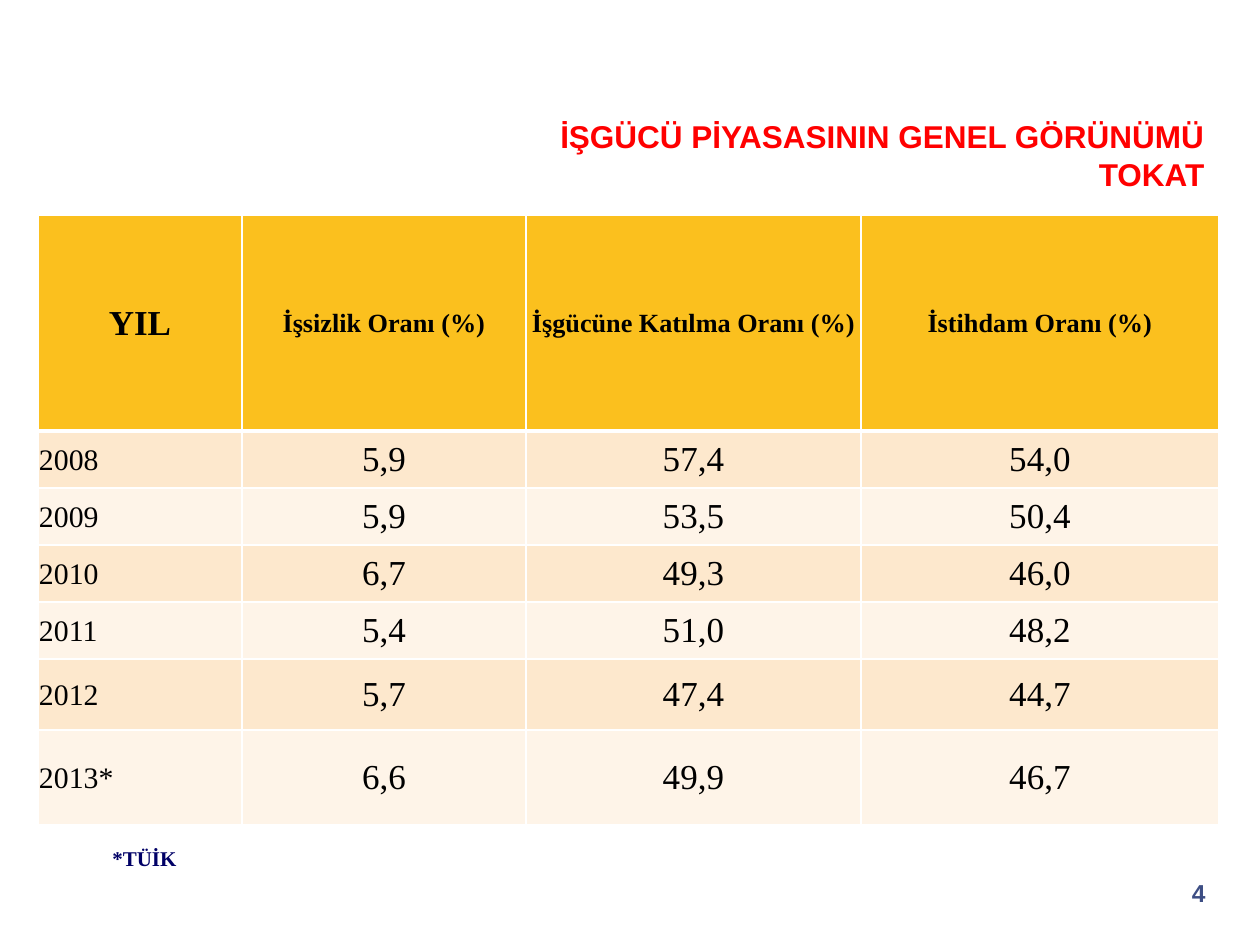
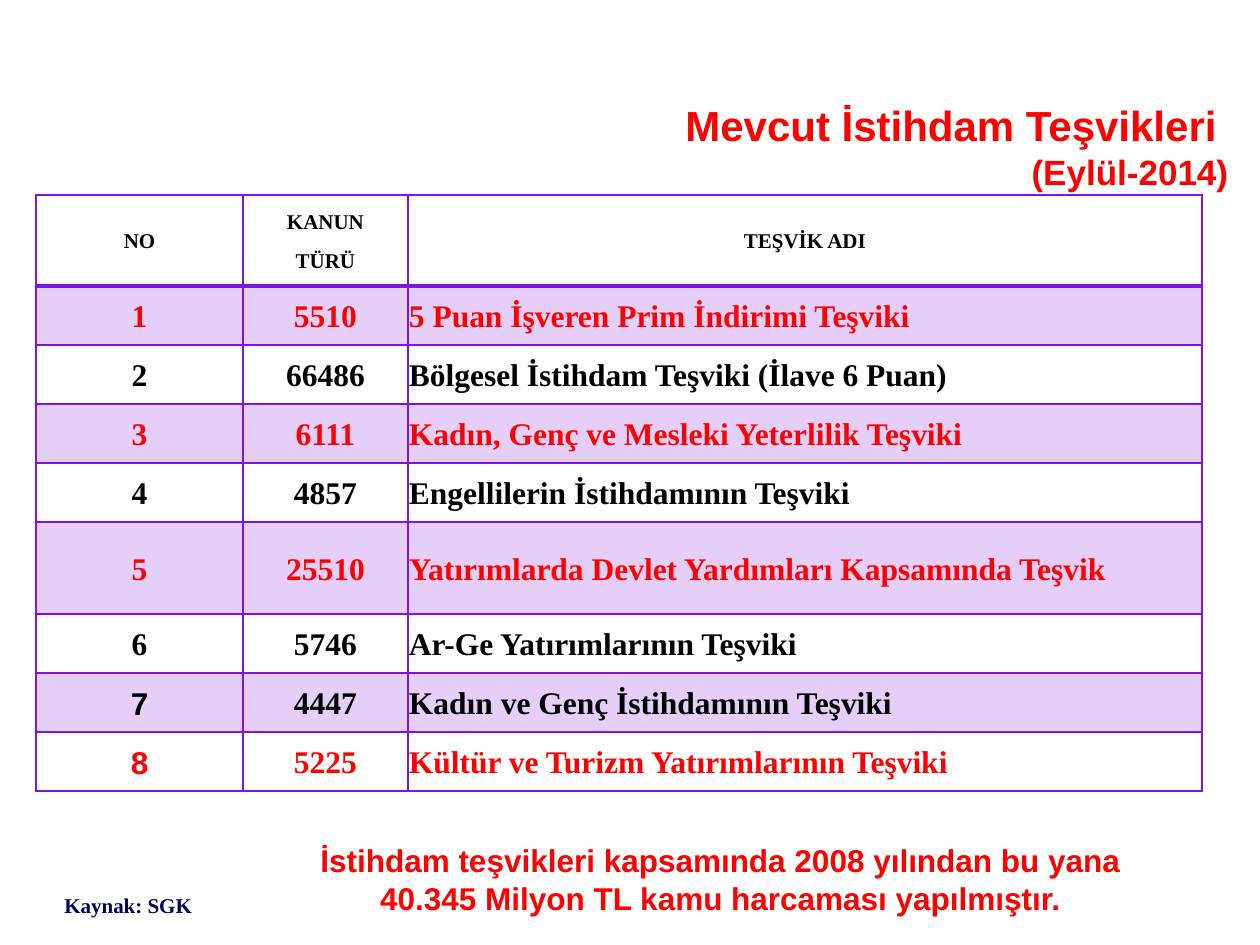
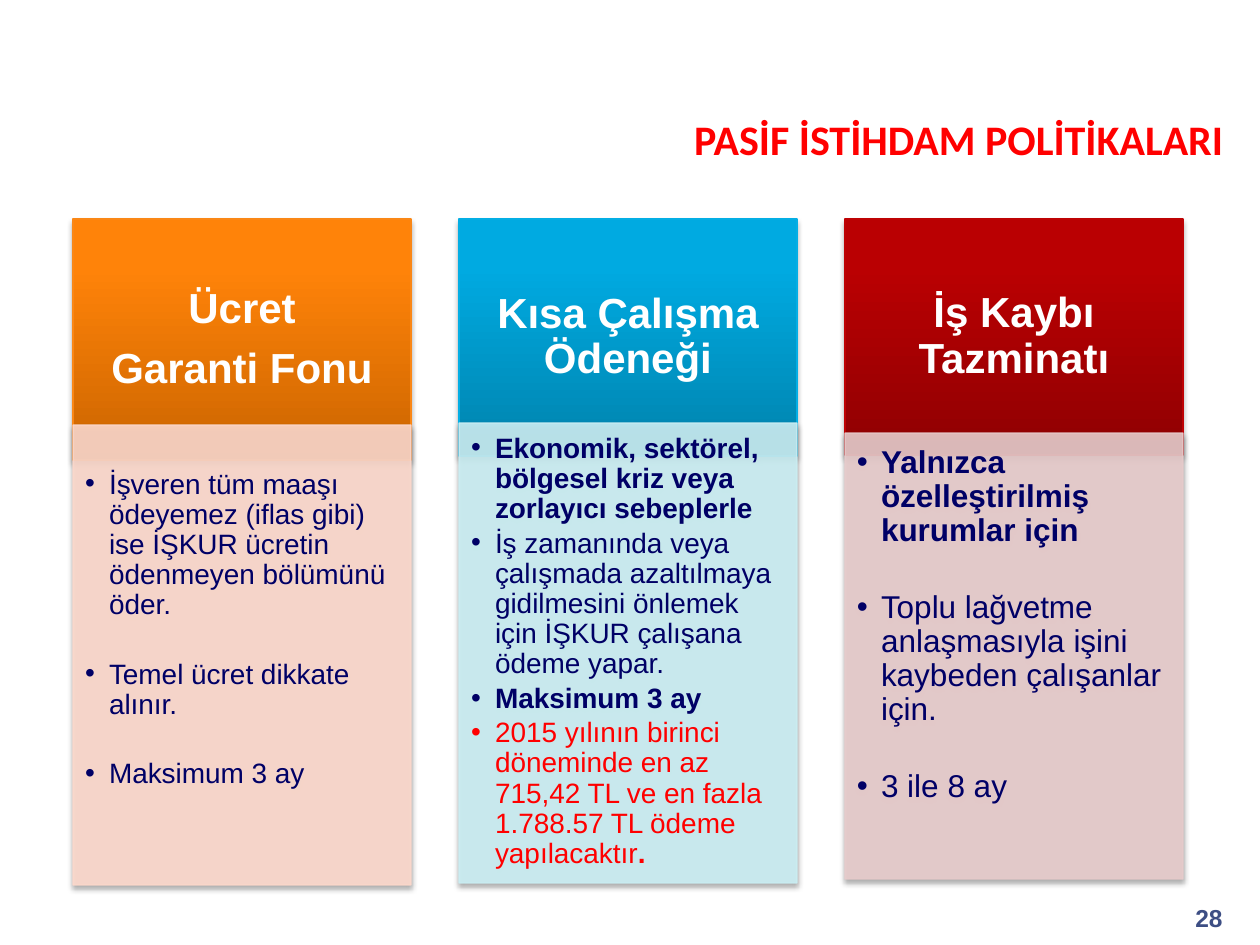
import lxml.etree
import pptx
import pptx.dml.color
import pptx.enum.shapes
import pptx.enum.text
import pptx.oxml.ns
import pptx.util

PX = 914400 // 126  # EMU in one px
ALIGN = pptx.enum.text.PP_ALIGN
ANCHOR = pptx.enum.text.MSO_ANCHOR
qn = pptx.oxml.ns.qn

# Shared look
RED, NAVY, BLACK, WHITE = "FF0000", "000066", "000000", "FFFFFF"
NUMBER_BLUE, PURPLE = "3D4E84", "7E13E3"
GOLD, SAND, CREAM = "FBC01E", "FDE8CD", "FEF4E8"
SANS, SERIF, TITLE_ALT = "Arial", "Times New Roman", "Calibri"
TITLE_ONLY, COMPARISON = 5, 4

RATES = [
    ("YIL", "İşsizlik Oranı (%)", "İşgücüne Katılma Oranı (%)", "İstihdam Oranı (%)"),
    ("2008", "5,9", "57,4", "54,0"),
    ("2009", "5,9", "53,5", "50,4"),
    ("2010", "6,7", "49,3", "46,0"),
    ("2011", "5,4", "51,0", "48,2"),
    ("2012", "5,7", "47,4", "44,7"),
    ("2013*", "6,6", "49,9", "46,7"),
]
INCENTIVES = [
    ("NO", "KANUN\nTÜRÜ", "TEŞVİK ADI"),
    ("1", "5510", "5 Puan İşveren Prim İndirimi Teşviki"),
    ("2", "66486", "Bölgesel İstihdam Teşviki (İlave 6 Puan)"),
    ("3", "6111", "Kadın, Genç ve Mesleki Yeterlilik Teşviki"),
    ("4", "4857", "Engellilerin İstihdamının Teşviki"),
    ("5", "25510", "Yatırımlarda Devlet Yardımları Kapsamında Teşvik"),
    ("6", "5746", "Ar-Ge Yatırımlarının Teşviki"),
    ("7", "4447", "Kadın ve Genç İstihdamının Teşviki"),
    ("8", "5225", "Kültür ve Turizm Yatırımlarının Teşviki"),
]
RED_INCENTIVES = (1, 3, 5, 8)

# Each list entry is a list of spans: (text, bold, colour)
POLICIES = [
    dict(heading="Ücret\nGaranti Fonu", dark="CB6500", bright="FF8309", edge="FA8716",
         head_height=241, tint="FDD9CC", top=425, height=460, inset=45, size=16, gap=22.2,
         entries=[
             [("İşveren tüm maaşı ödeyemez (iflas gibi) ise İŞKUR ücretin "
               "ödenmeyen bölümünü öder.", False, NAVY)],
             [("Temel ücret dikkate alınır.", False, NAVY)],
             [("Maksimum 3 ay", False, NAVY)]]),
    dict(heading="Kısa Çalışma Ödeneği", dark="0083AD", bright="00AAE1", edge="04AEE4",
         head_height=237, tint="CBEFF4", top=423, height=460, inset=11, size=16, gap=2.4,
         entries=[
             [("Ekonomik, sektörel, bölgesel kriz veya zorlayıcı sebeplerle", True, NAVY)],
             [("İş zamanında veya çalışmada azaltılmaya gidilmesini önlemek "
               "için İŞKUR çalışana ödeme yapar.", False, NAVY)],
             [("Maksimum 3 ay", True, NAVY)],
             [("2015 yılının birinci döneminde en az 715,42 TL ve en fazla "
               "1.788.57 TL ödeme yapılacaktır", False, RED), (".", True, RED)]]),
    dict(heading="İş Kaybı Tazminatı", dark="8F0002", bright="BA0002", edge="BE0204",
         head_height=236, tint="E8CCCC", top=433, height=446, inset=13, size=18, gap=24.6,
         entries=[
             [("Yalnızca özelleştirilmiş kurumlar için", True, NAVY)],
             [("Toplu lağvetme anlaşmasıyla işini kaybeden çalışanlar için.", False, NAVY)],
             [("3 ile 8 ay", False, NAVY)]]),
]


def px(*lengths):
    return [pptx.util.Emu(length * PX) for length in lengths]


def rgb(color):
    return pptx.dml.color.RGBColor.from_string(color)


def paint(fill, color, alpha=100):
    fill.solid()
    fill.fore_color.rgb = rgb(color)
    if alpha < 100:
        for tag in fill._xPr.iter(qn("a:srgbClr")):
            lxml.etree.SubElement(tag, qn("a:alpha"), val=str(alpha * 1000))


def style(span, size, color, bold=True, face=SANS):
    span.font.size = pptx.util.Pt(size)
    span.font.bold = bold
    span.font.name = face
    span.font.color.rgb = rgb(color)


def place(shape, left, top, width, height):
    shape.left, shape.top, shape.width, shape.height = px(left, top, width, height)


def set_insets(frame, left, top, right, bottom):
    (frame.margin_left, frame.margin_top,
     frame.margin_right, frame.margin_bottom) = px(left, top, right, bottom)


def add_title(page, text, area, sizes, face=SANS):
    """Right-aligned red title; sizes holds one size per line."""
    title = page.shapes.title
    place(title, *area)
    frame = title.text_frame
    frame.auto_size = pptx.enum.text.MSO_AUTO_SIZE.NONE
    frame.vertical_anchor = ANCHOR.MIDDLE
    para = frame.paragraphs[0]
    para.text = text
    para.alignment = ALIGN.RIGHT
    for span, size in zip(para.runs, sizes):
        style(span, size, RED, face=face)


def add_text(page, text, area, size, color, align=ALIGN.LEFT, face=SANS, wrap=True):
    box = page.shapes.add_textbox(*px(*area))
    frame = box.text_frame
    frame.word_wrap = wrap
    frame.text = text
    for para in frame.paragraphs:
        para.alignment = align
        for span in para.runs:
            style(span, size, color, face=face)


def add_page_number(page, number, left, top):
    add_text(page, number, (left, top, 72, 63), 14, NUMBER_BLUE, ALIGN.RIGHT)


def add_note(page, text, left, top, width):
    add_text(page, text, (left, top, width, 38), 12, NAVY, face=SERIF)


def set_borders(cell, color, top, bottom):
    properties = cell._tc.get_or_add_tcPr()
    for index, (side, width) in enumerate(
            (("L", 1), ("R", 1), ("T", top), ("B", bottom))):
        line = lxml.etree.Element(qn("a:ln" + side), w=str(width * 12700))
        solid = lxml.etree.SubElement(line, qn("a:solidFill"))
        lxml.etree.SubElement(solid, qn("a:srgbClr"), val=color)
        properties.insert(index, line)


def add_grid(page, rows, left, top, widths, heights, border, rule, format_cell):
    """Table whose header row is underlined with a rule of the given width."""
    table = page.shapes.add_table(len(rows), len(widths), *px(
        left, top, sum(widths), sum(heights))).table
    table.first_row = table.horz_banding = False
    for column, width in zip(table.columns, px(*widths)):
        column.width = width
    for row, height in zip(table.rows, px(*heights)):
        row.height = height
    for r, values in enumerate(rows):
        for c, value in enumerate(values):
            cell = table.cell(r, c)
            cell.text = value
            cell.vertical_anchor = ANCHOR.MIDDLE
            set_insets(cell, 1, 1, 1, 0)
            format_cell(cell, r, c)
            set_borders(cell, border, rule if r == 1 else 1, rule if r == 0 else 1)


def format_rate(cell, r, c):
    header = r == 0
    paint(cell.fill, GOLD if header else SAND if r % 2 else CREAM)
    para = cell.text_frame.paragraphs[0]
    para.alignment = ALIGN.CENTER if header or c else ALIGN.LEFT
    if header:
        size = 15 if c else 20
    else:
        size = 20 if c else 17
    style(para.runs[0], size, BLACK, header, SERIF)


def format_incentive(cell, r, c):
    if r % 2:
        paint(cell.fill, PURPLE, 20)
    else:
        cell.fill.background()
    for para in cell.text_frame.paragraphs:
        para.alignment = ALIGN.LEFT if r and c == 2 else ALIGN.CENTER
        para.line_spacing = 1.07
        para.space_after = pptx.util.Pt(8)
        style(para.runs[0], 18 if r else 12, RED if r in RED_INCENTIVES else BLACK,
              face=SANS if r >= 7 and c == 0 else SERIF)


def add_shadow(shape):
    shape.shadow.inherit = False
    effects = shape._element.spPr.find(qn("a:effectLst"))
    shadow = lxml.etree.SubElement(effects, qn("a:outerShdw"), blurRad="39400", dist="22900",
                                   dir="5400000", rotWithShape="0")
    color = lxml.etree.SubElement(shadow, qn("a:srgbClr"), val=BLACK)
    lxml.etree.SubElement(color, qn("a:alpha"), val="35000")


def add_policy_heading(page, policy, left, top, width):
    box = page.shapes.add_shape(pptx.enum.shapes.MSO_SHAPE.RECTANGLE,
                                *px(left, top, width, policy["head_height"]))
    box.fill.gradient()
    box.fill.gradient_angle = 90
    for stop, position, color in zip(box.fill.gradient_stops, (0, 0.8),
                                     (policy["dark"], policy["bright"])):
        stop.position = position
        stop.color.rgb = rgb(color)
    paint(box.line.fill, policy["edge"])
    box.line.width = pptx.util.Pt(0.75)
    add_shadow(box)
    frame = box.text_frame
    frame.word_wrap = True
    frame.vertical_anchor = ANCHOR.MIDDLE
    set_insets(frame, 24, 14, 24, 14)
    frame.text = policy["heading"]
    for para in frame.paragraphs:
        para.alignment = ALIGN.CENTER
        para.line_spacing = 0.9
        para.space_after = pptx.util.Pt(8.4)
        style(para.runs[0], 24, WHITE)


def add_bullet(para):
    properties = para._p.get_or_add_pPr()
    properties.set("marL", str(24 * PX))
    properties.set("indent", str(-24 * PX))
    lxml.etree.SubElement(properties, qn("a:buFont"), typeface=SANS)
    lxml.etree.SubElement(properties, qn("a:buChar"), char="•")


def fill_policy_panel(page, panel, policy, left, width):
    place(panel, left, policy["top"], width, policy["height"])
    page.shapes._spTree.append(panel._element)  # in front of its heading
    paint(panel.fill, policy["tint"], 90)
    paint(panel.line.fill, policy["tint"], 90)
    panel.line.width = pptx.util.Pt(0.75)
    add_shadow(panel)
    frame = panel.text_frame
    frame.auto_size = pptx.enum.text.MSO_AUTO_SIZE.NONE
    frame.vertical_anchor = ANCHOR.TOP
    set_insets(frame, 12, policy["inset"], 15, 18)
    for index, entry in enumerate(policy["entries"]):
        para = frame.add_paragraph() if index else frame.paragraphs[0]
        add_bullet(para)
        para.alignment = ALIGN.LEFT
        para.line_spacing = 0.9
        para.space_before = pptx.util.Pt(0)
        para.space_after = pptx.util.Pt(policy["gap"])
        for text, bold, color in entry:
            span = para.add_run()
            span.text = text
            style(span, policy["size"], color, bold)


def build_rates(page):
    add_title(page, "İŞGÜCÜ PİYASASININ GENEL GÖRÜNÜMÜ\vTOKAT", (406, 96, 811, 118), (18, 18))
    add_grid(page, RATES, 38, 215, (204, 284, 335, 358),
             (216, 57, 57, 57, 57, 71, 95), WHITE, 3, format_rate)
    add_note(page, "*TÜİK", 100, 839, 195)
    add_page_number(page, "4", 1146, 872)


def build_incentives(page):
    add_title(page, "Mevcut İstihdam Teşvikleri \v(Eylül-2014)", (505, 96, 736, 100), (24, 20))
    add_grid(page, INCENTIVES, 36, 195, (207, 165, 794),
             (91, 59, 59, 59, 59, 92, 59, 59, 59), PURPLE, 2, format_incentive)
    add_note(page, "Kaynak: SGK", 52, 886, 164)
    add_text(page, "İstihdam teşvikleri kapsamında 2008 yılından bu yana\n"
             "40.345 Milyon TL kamu harcaması yapılmıştır.",
             (239, 835, 963, 110), 18, RED, ALIGN.CENTER, wrap=False)


def build_policies(page):
    add_title(page, "PASİF İSTİHDAM POLİTİKALARI", (241, 92, 995, 93), (24,), TITLE_ALT)
    *panels, spare = list(page.placeholders)[1:]
    spare._element.getparent().remove(spare._element)
    for index, (panel, policy) in enumerate(zip(panels, POLICIES)):
        left = 73 + 386 * index
        add_policy_heading(page, policy, left, 219, 338)
        fill_policy_panel(page, panel, policy, left, 338)
    add_page_number(page, "28", 1163, 897)


def main():
    deck = pptx.Presentation()
    deck.slide_width, deck.slide_height = pptx.util.Inches(10), pptx.util.Inches(7.5)
    for layout, build in ((TITLE_ONLY, build_rates), (TITLE_ONLY, build_incentives),
                          (COMPARISON, build_policies)):
        build(deck.slides.add_slide(deck.slide_layouts[layout]))
    deck.save("out.pptx")


if __name__ == "__main__":
    main()
